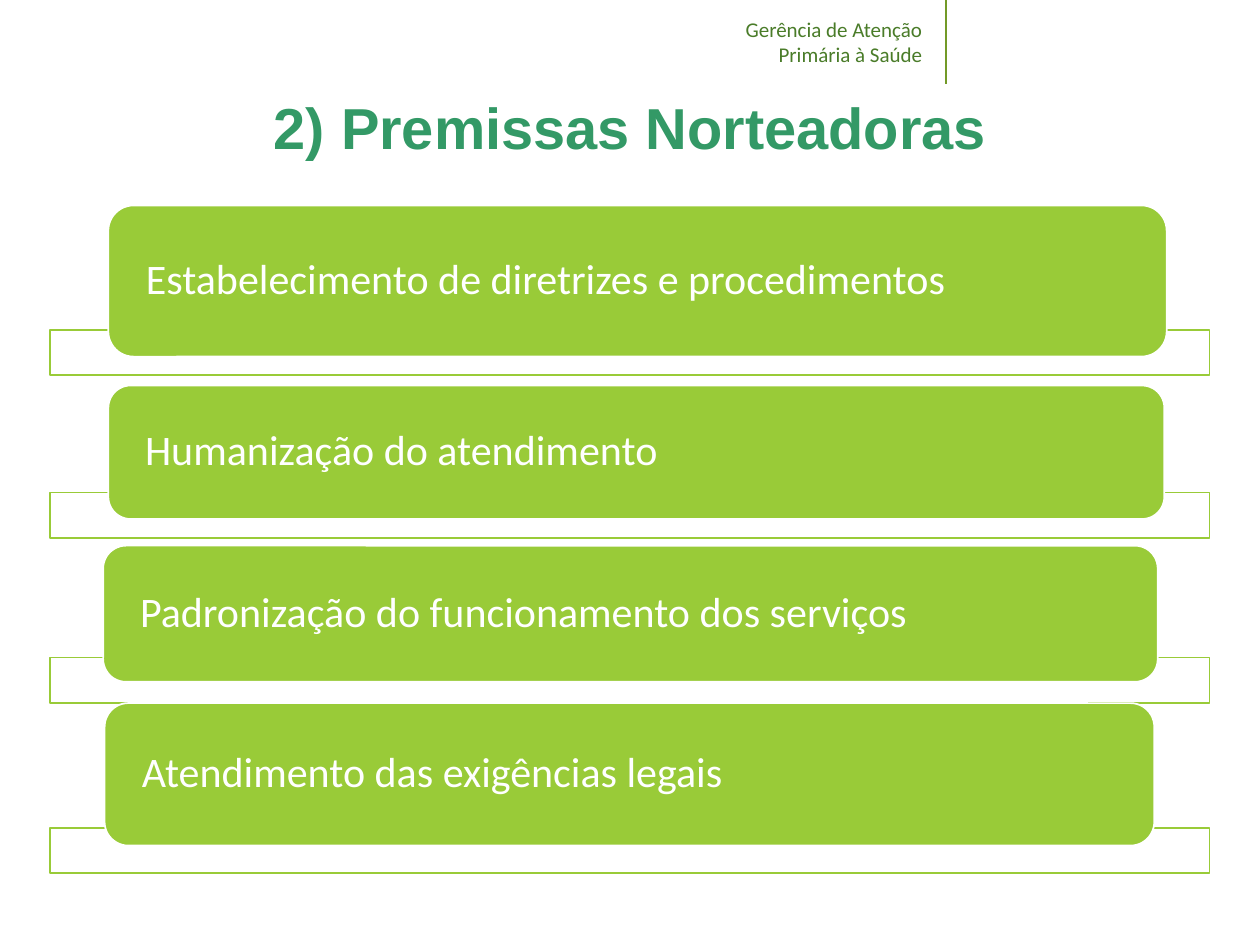
"""Build the slide of guiding premises."""
import pptx
import pptx.util
import pptx.dml.color
import pptx.enum.shapes
import pptx.enum.text
import pptx.oxml.ns
from lxml import etree

Pt = pptx.util.Pt
ALIGN = pptx.enum.text.PP_ALIGN
SHAPE = pptx.enum.shapes.MSO_SHAPE
MIDDLE = pptx.enum.text.MSO_ANCHOR.MIDDLE
TINT = {"lime": "99CB38", "olive": "739A28", "leaf": "4A7C29",
        "green": "339966", "white": "FFFFFF"}
HEAD = {"name": "Arial", "size": Pt(33), "bold": True}
ITEM = {"name": "Calibri", "size": Pt(24)}
NOTE = {"name": "Calibri", "size": Pt(12)}
CARDS = [
    ("Estabelecimento de diretrizes e procedimentos", (61.9, 117.4, 604.8, 86.4), 188.6),
    ("Humanização do atendimento", (61.9, 220.3, 603.4, 76.3), 281.5),
    ("Padronização do funcionamento dos serviços", (59, 311.8, 602.6, 77.8), 375.8),
    ("Atendimento das exigências legais", (59.8, 401.8, 599.8, 81.4), 473),
]


def rgb(key):
    return pptx.dml.color.RGBColor.from_string(TINT[key])


def style(para, look, tint, align):
    for key, val in look.items():
        setattr(para.font, key, val)
    para.font.color.rgb = rgb(tint)
    para.alignment = align


def tag(node, name, **attrs):
    return etree.SubElement(node, pptx.oxml.ns.qn(name), attrs)


def block(slide, kind, box, fill, line):
    shape = slide.shapes.add_shape(kind, *map(Pt, box))
    shape.shadow.inherit = False
    shape.fill.solid()
    shape.fill.fore_color.rgb = rgb(fill)
    shape.line.color.rgb = rgb(line)
    shape.line.width = Pt(1)
    return shape


def band(slide, top):
    shape = block(slide, SHAPE.RECTANGLE, (28.8, top, 662.4, 25.9), "white", "lime")
    fill = shape.fill.fore_color
    fill.rgb = rgb("white")
    color = shape.element.spPr.find(".//" + pptx.oxml.ns.qn("a:srgbClr"))
    tag(color, "a:alpha", val="90000")


def card(slide, text, box):
    shape = block(slide, SHAPE.ROUNDED_RECTANGLE, box, "lime", "white")
    frame = shape.text_frame
    form = {"word_wrap": True, "vertical_anchor": MIDDLE, "margin_left": Pt(17.3),
            "margin_right": Pt(17.3), "margin_top": 0, "margin_bottom": 0}
    for key, val in form.items():
        setattr(frame, key, val)
    frame.text = text
    para = frame.paragraphs[0]
    style(para, ITEM, "white", ALIGN.LEFT)
    para.line_spacing = 0.9


def title(slide, text):
    shape = slide.shapes.title
    form = {"left": Pt(49.7), "top": Pt(34.6), "width": Pt(620.6), "height": Pt(80.6)}
    for key, val in form.items():
        setattr(shape, key, val)
    shape.text_frame.text = text
    shape.text_frame.vertical_anchor = MIDDLE
    para = shape.text_frame.paragraphs[0]
    style(para, HEAD, "green", ALIGN.CENTER)
    para.line_spacing = 0.9


def label(slide, lines):
    box = slide.shapes.add_textbox(Pt(419), Pt(5.8), Pt(115.9), Pt(36))
    frame = box.text_frame
    frame.word_wrap = False
    frame.auto_size = pptx.enum.text.MSO_AUTO_SIZE.SHAPE_TO_FIT_TEXT
    frame.text = "\n".join(lines)
    for para, align in zip(frame.paragraphs, (ALIGN.LEFT, ALIGN.RIGHT)):
        style(para, NOTE, "leaf", align)


def rule(slide):
    kind = pptx.enum.shapes.MSO_CONNECTOR.STRAIGHT
    line = slide.shapes.add_connector(kind, Pt(540.7), 0, Pt(540.7), Pt(48.2))
    line.line.color.rgb = rgb("olive")
    line.line.width = Pt(1)
    tag(line.element.spPr, "a:effectLst")


def main():
    deck = pptx.Presentation()
    deck.slide_width, deck.slide_height = Pt(720), Pt(540)
    slide = deck.slides.add_slide(deck.slide_layouts[5])
    label(slide, ["Gerência de Atenção", "Primária à Saúde"])
    rule(slide)
    title(slide, "2) Premissas Norteadoras")
    for text, box, top in CARDS:
        band(slide, top)
        card(slide, text, box)
    deck.save("out.pptx")


if __name__ == "__main__":
    main()
